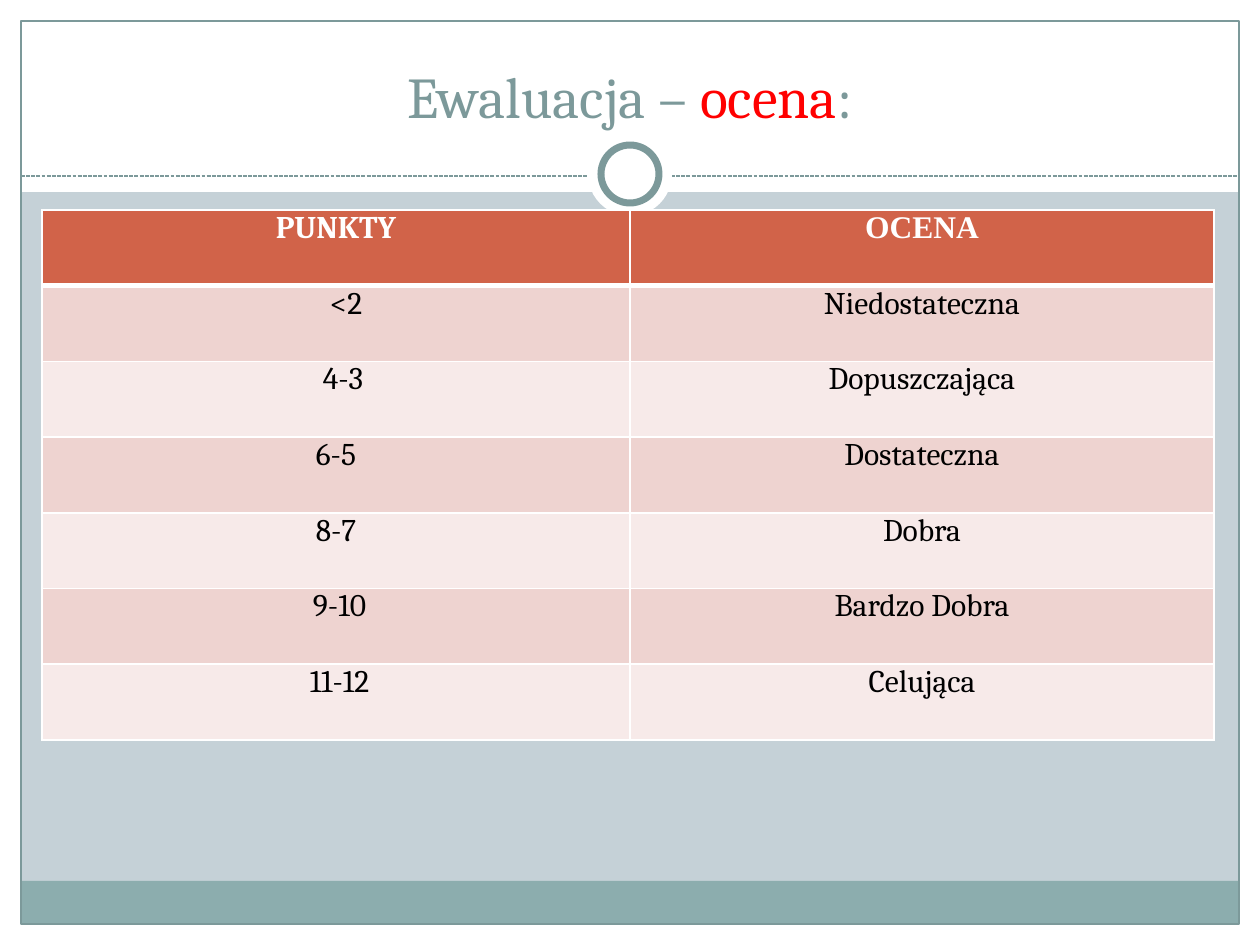
"""Build the grading slide: a framed title and a table of points and grades."""
from lxml.etree import SubElement
from pptx import Presentation
from pptx.dml.color import RGBColor
from pptx.enum.dml import MSO_LINE
from pptx.enum.shapes import MSO_CONNECTOR, MSO_SHAPE
from pptx.enum.text import MSO_ANCHOR, PP_ALIGN
from pptx.oxml.ns import qn
from pptx.util import Pt

PX = 914400 // 126
WIDE, HIGH = 1260, 945
EDGE = 21
WHITE = RGBColor(0xFF, 0xFF, 0xFF)
BLACK = RGBColor(0x00, 0x00, 0x00)
RED = RGBColor(0xFF, 0x00, 0x00)
TEAL = RGBColor(0x7C, 0x99, 0x9A)
STRIP = RGBColor(0x8C, 0xAD, 0xAE)
BACK = RGBColor(0xC5, 0xD1, 0xD7)
RUST = RGBColor(0xD1, 0x63, 0x49)
PINK = RGBColor(0xEE, 0xD3, 0xD0)
PALE = RGBColor(0xF7, 0xEA, 0xE9)
SERIF = "Cambria"

COLS = (588, 584)
GRADES = (
    ("PUNKTY", "OCENA", 0),
    ("<2", "Niedostateczna", 20),
    ("4-3", "Dopuszczająca", 14),
    ("6-5", "Dostateczna", 0),
    ("8-7", "Dobra", 0),
    ("9-10", "Bardzo Dobra", 7),
    ("11-12", "Celująca", 7),
)


def scale(*sizes):
    """Turn pixel lengths into EMU."""
    return [size * PX for size in sizes]


def add_form(slide, kind, box, fill=None, line=None, width=0.75):
    """Add a flat preset shape with an optional fill and outline."""
    form = slide.shapes.add_shape(kind, *scale(*box))
    form.shadow.inherit = False
    for paint, color in ((form.fill, fill), (form.line.fill, line)):
        if color is None:
            paint.background()
        else:
            paint.solid()
            paint.fore_color.rgb = color
    if line is not None:
        form.line.width = Pt(width)


def add_rule(slide, left, right, top):
    """Add the dashed rule below the title."""
    rule = slide.shapes.add_connector(
        MSO_CONNECTOR.STRAIGHT, *scale(left, top, right, top))
    rule.line.color.rgb = TEAL
    rule.line.width = Pt(0.75)
    rule.line.dash_style = MSO_LINE.SQUARE_DOT
    SubElement(rule.element.spPr, qn("a:effectLst"))


def add_title(slide, box, parts):
    """Add the centred title from pairs of text and colour."""
    frame = slide.shapes.add_textbox(*scale(*box)).text_frame
    frame.word_wrap = True
    frame.vertical_anchor = MSO_ANCHOR.BOTTOM
    line = frame.paragraphs[0]
    line.alignment = PP_ALIGN.CENTER
    line.font.size = Pt(33)
    line.font.name = SERIF
    for text, color in parts:
        run = line.add_run()
        run.text = text
        run.font.color.rgb = color


def set_sides(cell, base):
    """Draw white cell borders with the given bottom width."""
    props = cell._tc.get_or_add_tcPr()
    for side, width in (("L", 1), ("R", 1), ("T", 1), ("B", base)):
        line = SubElement(props, qn(f"a:ln{side}"), w=str(Pt(width)))
        paint = SubElement(line, qn("a:solidFill"))
        SubElement(paint, qn("a:srgbClr"), val=str(WHITE))


def set_cell(cell, text, fill, head, font, shift):
    """Style one table cell, its text moved by a wider left margin."""
    set_sides(cell, 3 if head else 1)
    cell.fill.solid()
    cell.fill.fore_color.rgb = fill
    cell.margin_left, cell.margin_right = scale(9 + shift, 9)
    cell.margin_top = cell.margin_bottom = 0
    cell.text = text
    line = cell.text_frame.paragraphs[0]
    line.alignment = PP_ALIGN.CENTER
    line.font.size = Pt(18)
    line.font.name = font
    line.font.bold = head
    line.font.color.rgb = WHITE if head else BLACK


def add_grades(slide, left, top, high):
    """Add the table of points and grades."""
    box = scale(left, top, sum(COLS), high)
    table = slide.shapes.add_table(len(GRADES), len(COLS), *box).table
    for col, wide in zip(table.columns, COLS):
        col.width = wide * PX
    for row, (points, grade, shift) in enumerate(GRADES):
        head = row == 0
        fill = RUST if head else (PALE, PINK)[row % 2]
        font = "Times New Roman" if head else SERIF
        set_cell(table.cell(row, 0), points, fill, head, SERIF, shift)
        set_cell(table.cell(row, 1), grade, fill, head, font, 0)


def add_frame(slide):
    """Add the white margins, bottom strip, outline, rule and ring."""
    rect, oval = MSO_SHAPE.RECTANGLE, MSO_SHAPE.OVAL
    inner, base = WIDE - 2 * EDGE, HIGH - EDGE
    for box in ((0, base, WIDE, EDGE), (0, 0, WIDE, 192),
                (0, 0, EDGE, HIGH), (WIDE - EDGE, 0, EDGE, HIGH)):
        add_form(slide, rect, box, WHITE)
    add_form(slide, rect, (EDGE, base - 43, inner, 43), STRIP)
    add_form(slide, rect, (EDGE, EDGE, inner, base - EDGE), line=TEAL)
    add_rule(slide, EDGE, WIDE - EDGE, 176)
    add_form(slide, oval, (588, 132, 84, 84), WHITE)
    add_form(slide, oval, (601, 145, 58, 58), WHITE, TEAL, 4)


def main():
    """Build and save the slide."""
    deck = Presentation()
    deck.slide_width, deck.slide_height = scale(WIDE, HIGH)
    slide = deck.slides.add_slide(deck.slide_layouts[6])
    slide.background.fill.solid()
    slide.background.fill.fore_color.rgb = BACK
    add_frame(slide)
    add_title(slide, (42, 32, 1176, 104),
              (("Ewaluacja –", TEAL), (" ocena", RED), (":", TEAL)))
    add_grades(slide, 42, 210, 530)
    deck.save("out.pptx")


if __name__ == "__main__":
    main()
